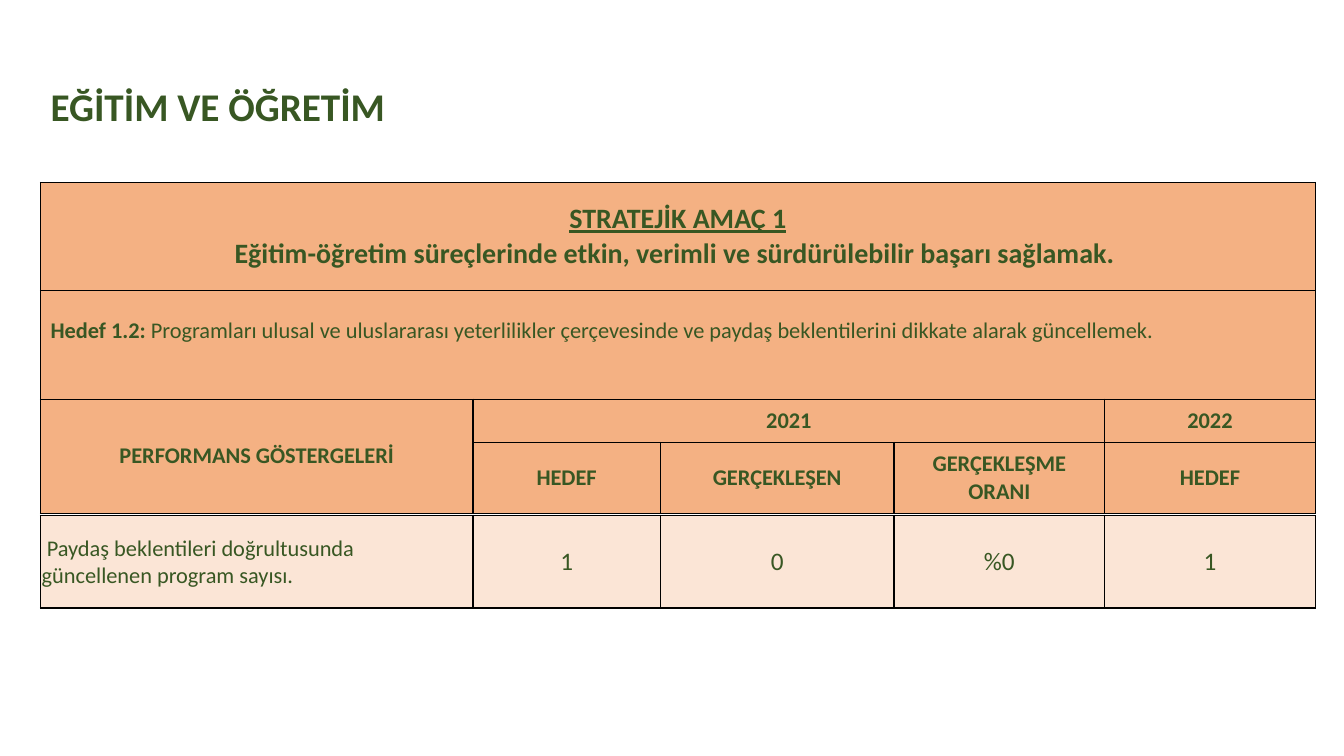
from lxml import etree
from pptx import Presentation
from pptx.dml.color import RGBColor
from pptx.enum.text import MSO_ANCHOR, MSO_AUTO_SIZE, PP_ALIGN
from pptx.oxml.ns import qn
from pptx.util import Cm, Pt

LEFT, CENTER, JUSTIFY = PP_ALIGN.LEFT, PP_ALIGN.CENTER, PP_ALIGN.JUSTIFY
MIDDLE = MSO_ANCHOR.MIDDLE
NO_AUTOFIT = MSO_AUTO_SIZE.NONE

COLORS = {"text": "385723", "header": "F4B183", "body": "FBE5D6", "border": "000000"}
FONT = "Calibri"
TABLE_LEFT = Cm(1.02)
COLUMN_WIDTHS = [10.9, 4.72, 5.89, 5.31, 5.31]


def write(paragraph, text, size=16, bold=False, underline=False, align=CENTER):
    paragraph.alignment = align
    run = paragraph.add_run()
    run.text = text
    run.font.name = FONT
    run.font.size = Pt(size)
    run.font.bold = bold
    run.font.underline = underline
    run.font.color.rgb = RGBColor.from_string(COLORS["text"])


def add_grid(slide, top, row_heights, fill):
    """Add a table with filled, middle-anchored cells and thin borders."""
    shape = slide.shapes.add_table(
        len(row_heights), len(COLUMN_WIDTHS), TABLE_LEFT, Cm(top),
        Cm(sum(COLUMN_WIDTHS)), Cm(sum(row_heights)))
    table = shape.table
    table.first_row = table.horz_banding = False
    for column, width in zip(table.columns, COLUMN_WIDTHS):
        column.width = Cm(width)
    for row, height in zip(table.rows, row_heights):
        row.height = Cm(height)
    for cell in table.iter_cells():
        cell.vertical_anchor = MIDDLE
        cell.fill.solid()
        cell.fill.fore_color.rgb = RGBColor.from_string(COLORS[fill])
        properties = cell._tc.get_or_add_tcPr()
        for position, side in enumerate(("a:lnL", "a:lnR", "a:lnT", "a:lnB")):
            line = etree.Element(qn(side), w=str(Pt(1)))
            solid = etree.SubElement(line, qn("a:solidFill"))
            etree.SubElement(solid, qn("a:srgbClr"), val=COLORS["border"])
            properties.insert(position, line)
    return table


presentation = Presentation()
presentation.slide_width, presentation.slide_height = Cm(33.87), Cm(19.05)
slide = presentation.slides.add_slide(presentation.slide_layouts[5])

# Title
title = slide.shapes.title
title.left, title.top, title.width, title.height = TABLE_LEFT, Cm(0.91), Cm(29.21), Cm(3.68)
title.text_frame.auto_size = NO_AUTOFIT
title.text_frame.vertical_anchor = MIDDLE
title_paragraph = title.text_frame.paragraphs[0]
title_paragraph.line_spacing = 0.9
write(title_paragraph, "EĞİTİM VE ÖĞRETİM", size=28, bold=True, align=LEFT)

# Header table: merged areas as first and last (row, column)
header = add_grid(slide, 4.6, [2.72, 2.74, 1.09, 1.78], "header")
for first, last in [((0, 0), (0, 4)), ((1, 0), (1, 4)), ((2, 0), (3, 0)), ((2, 1), (2, 3))]:
    header.cell(*first).merge(header.cell(*last))

# Strategic aim
aim_frame = header.cell(0, 0).text_frame
write(aim_frame.paragraphs[0], "STRATEJİK AMAÇ 1", size=20, bold=True, underline=True)
write(aim_frame.add_paragraph(),
      "Eğitim-öğretim süreçlerinde etkin, verimli ve sürdürülebilir başarı sağlamak. ",
      size=20, bold=True)

# Target, set a little above the middle of its row
target_cell = header.cell(1, 0)
target_cell.margin_bottom = Cm(0.84)
target_paragraph = target_cell.text_frame.paragraphs[0]
write(target_paragraph, "Hedef 1.2: ", bold=True, align=JUSTIFY)
write(target_paragraph,
      "Programları ulusal ve uluslararası yeterlilikler çerçevesinde "
      "ve paydaş beklentilerini dikkate alarak güncellemek.", align=JUSTIFY)

# Column headings
headings = {
    (2, 0): "PERFORMANS GÖSTERGELERİ", (2, 1): "2021", (2, 4): "2022",
    (3, 1): "HEDEF", (3, 2): "GERÇEKLEŞEN", (3, 3): "GERÇEKLEŞME ORANI", (3, 4): "HEDEF",
}
for place, heading in headings.items():
    write(header.cell(*place).text_frame.paragraphs[0], heading, bold=True)

# Indicator row
indicators = add_grid(slide, 12.98, [2.34], "body")
indicator_cell = indicators.cell(0, 0)
indicator_cell.margin_left = indicator_cell.margin_top = Cm(0.03)
indicator_cell.margin_right, indicator_cell.margin_bottom = Cm(1), 0
indicator_paragraph = indicator_cell.text_frame.paragraphs[0]
write(indicator_paragraph, "Paydaş beklentileri doğrultusunda güncellenen program sayısı.",
      align=LEFT)
indicator_paragraph._p.get_or_add_pPr().set("indent", str(Cm(0.13)))

for column, value in enumerate(["1", "0", "%0", "1"], start=1):
    cell = indicators.cell(0, column)
    cell.margin_left = cell.margin_right = cell.margin_top = cell.margin_bottom = Cm(0.08)
    write(cell.text_frame.paragraphs[0], value, size=18)

presentation.save("out.pptx")
